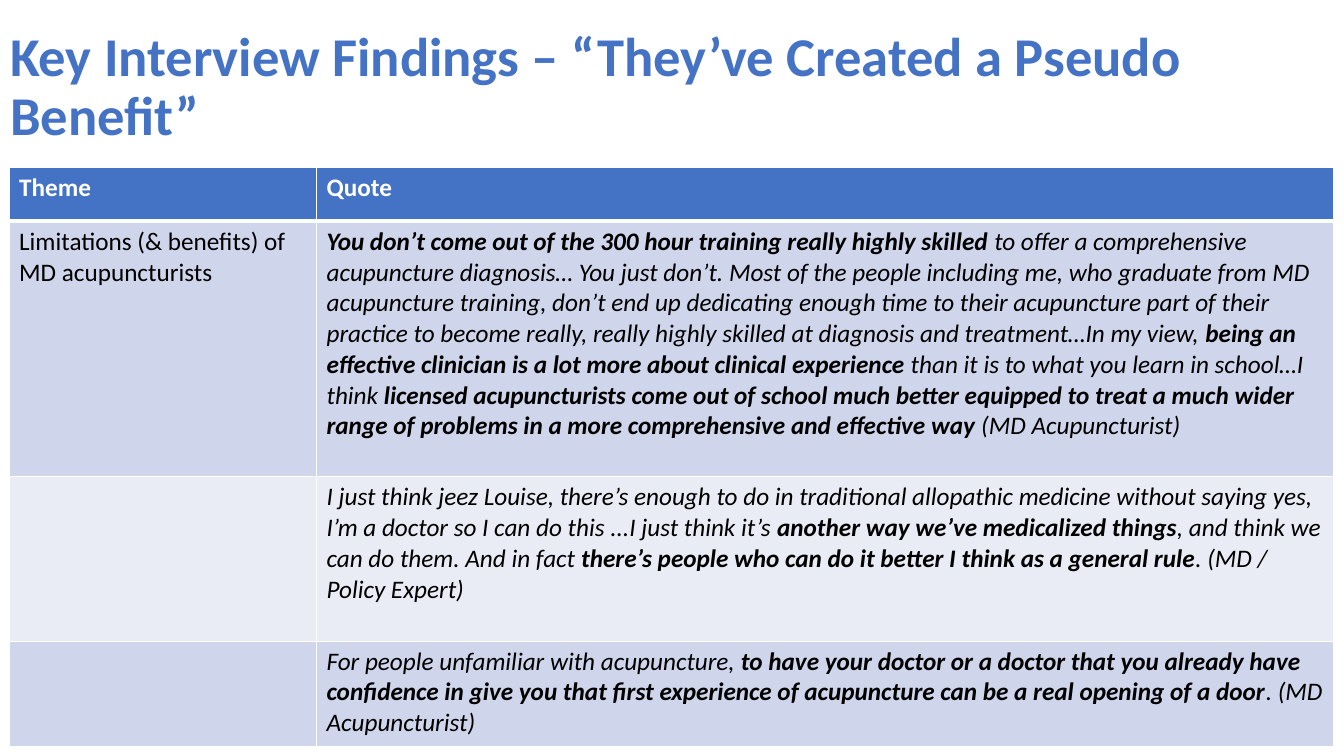
from dataclasses import dataclass

from lxml import etree
from pptx import Presentation
from pptx import util as u
from pptx.dml import color
from pptx.enum import text
from pptx.oxml import ns


@dataclass(frozen=True)
class Theme:
    font: str = "Calibri"
    title_size: int = 39
    table_size: int = 18
    accent: str = "4472C4"
    white: str = "FFFFFF"
    ink: str = "000000"
    bands: tuple = ("CFD5EA", "E9EBF5")
    border: int = 1
    header_rule: int = 3


class SlideBuilder:
    def __init__(self, slide, theme):
        self.slide = slide
        self.theme = theme

    def style(self, font, size, rgb, bold=None, italic=None):
        font.name = self.theme.font
        font.size = u.Pt(size)
        font.color.rgb = color.RGBColor.from_string(rgb)
        font.bold = bold
        font.italic = italic

    def title(self, wording, left, top, width, height):
        heading = self.slide.shapes.title
        heading.left, heading.top = u.Pt(left), u.Pt(top)
        heading.width, heading.height = u.Pt(width), u.Pt(height)
        frame = heading.text_frame
        frame.word_wrap = True
        frame.auto_size = text.MSO_AUTO_SIZE.NONE
        frame.vertical_anchor = text.MSO_ANCHOR.MIDDLE
        frame.text = wording
        paragraph = frame.paragraphs[0]
        paragraph.alignment = text.PP_ALIGN.LEFT
        paragraph.line_spacing = 0.9
        self.style(paragraph.font, self.theme.title_size, self.theme.accent, bold=True)

    def borders(self, cell, top, bottom):
        properties = cell._tc.get_or_add_tcPr()
        widths = {"L": self.theme.border, "R": self.theme.border, "T": top, "B": bottom}
        for side, width in widths.items():
            line = etree.SubElement(properties, ns.qn(f"a:ln{side}"), w=str(u.Pt(width)))
            fill = etree.SubElement(line, ns.qn("a:solidFill"))
            etree.SubElement(fill, ns.qn("a:srgbClr"), val=self.theme.white)

    def cell(self, cell, wording, row, italic):
        theme = self.theme
        header = row == 0
        self.borders(
            cell,
            top=theme.header_rule if row == 1 else theme.border,
            bottom=theme.header_rule if header else theme.border,
        )
        cell.fill.solid()
        background = theme.accent if header else theme.bands[(row - 1) % 2]
        cell.fill.fore_color.rgb = color.RGBColor.from_string(background)
        paragraph = cell.text_frame.paragraphs[0]
        self.style(paragraph.font, theme.table_size,
                   theme.white if header else theme.ink, header, italic)
        for index, part in enumerate(wording.split("**")):
            if part:
                run = paragraph.add_run()
                run.text = part
                if index % 2:
                    run.font.bold = True

    def table(self, rows, left, top, widths, heights):
        table = self.slide.shapes.add_table(
            len(rows), len(widths), u.Pt(left), u.Pt(top),
            u.Pt(sum(widths)), u.Pt(sum(heights))).table
        for column, width in zip(table.columns, widths):
            column.width = u.Pt(width)
        for row, (wordings, height) in enumerate(zip(rows, heights)):
            table.rows[row].height = u.Pt(height)
            for column, wording in enumerate(wordings):
                self.cell(table.cell(row, column), wording, row,
                          italic=row > 0 and column == 1)


FINDINGS = [
    ("Theme", "Quote"),
    ("Limitations (& benefits) of MD acupuncturists",
     "**You don’t come out of the 300 hour training really highly skilled **"
     "to offer a comprehensive acupuncture diagnosis… You just don’t. Most of the people "
     "including me, who graduate from MD acupuncture training, don’t end up dedicating "
     "enough time to their acupuncture part of their practice to become really, really "
     "highly skilled at diagnosis and treatment…In my view, "
     "**being an effective clinician is a lot more about clinical experience **"
     "than it is to what you learn in school…I think "
     "**licensed acupuncturists come out of school much better equipped to treat a much "
     "wider range of problems in a more comprehensive and effective way**"
     " (MD Acupuncturist)"),
    ("",
     "I just think jeez Louise, there’s enough to do in traditional allopathic medicine "
     "without saying yes, I’m a doctor so I can do this ...I just think it’s "
     "**another way we’ve medicalized things**, and think we can do them. And in fact "
     "**there’s people who can do it better I think as a general rule**"
     ". (MD / Policy Expert)"),
    ("",
     "For people unfamiliar with acupuncture, "
     "**to have your doctor or a doctor that you already have confidence in give you that "
     "first experience of acupuncture can be a real opening of a door**"
     ". (MD Acupuncturist)"),
]


def main():
    deck = Presentation()
    deck.slide_width, deck.slide_height = u.Pt(960), u.Pt(540)
    builder = SlideBuilder(deck.slides.add_slide(deck.slide_layouts[5]), Theme())
    builder.title("Key Interview Findings – “They’ve Created a Pseudo Benefit”",
                  left=0, top=10.8, width=953.3, height=104.4)
    builder.table(FINDINGS, left=6.5, top=119.5,
                  widths=(219.6, 726.5), heights=(38.5, 182.5, 117.5, 75.6))
    deck.save("out.pptx")


if __name__ == "__main__":
    main()
